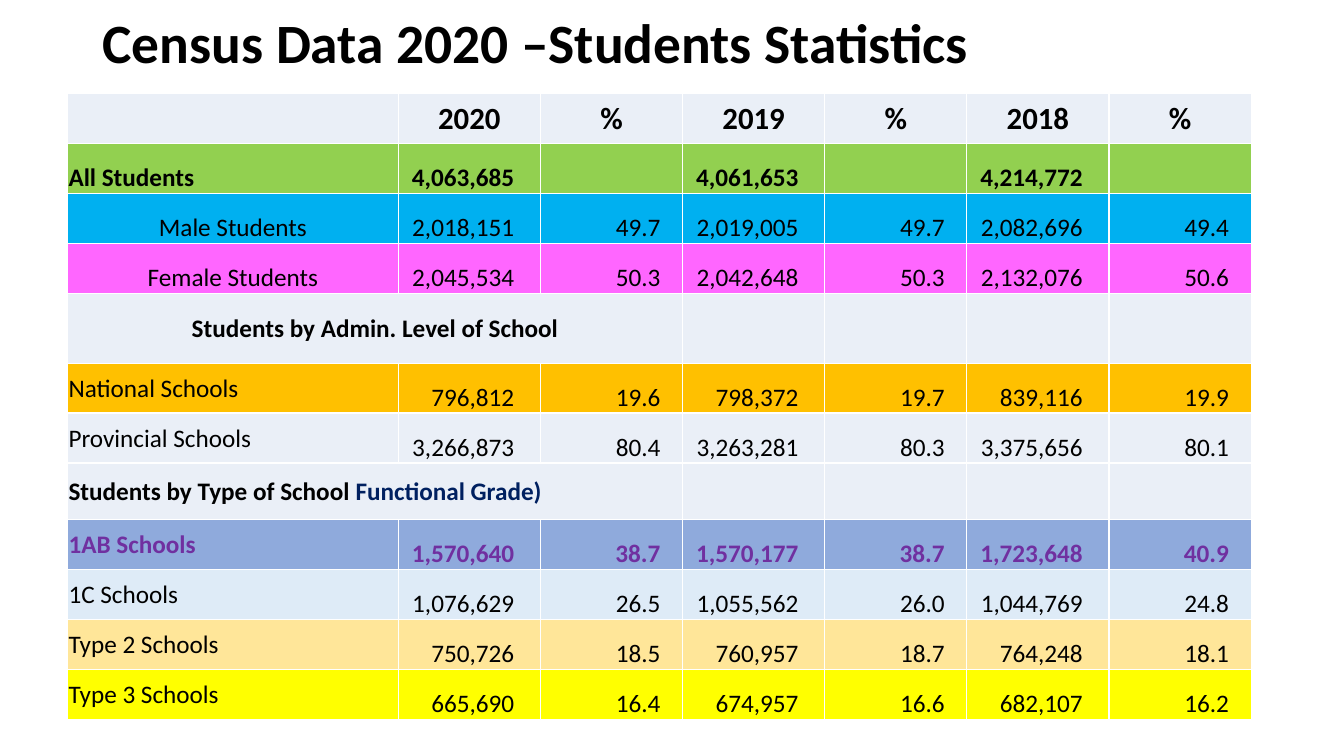
from dataclasses import dataclass

import lxml.etree
import pptx
import pptx.dml.color
import pptx.enum.text
import pptx.oxml.ns
import pptx.table
import pptx.text.text
import pptx.util

Inches = pptx.util.Inches
Align = pptx.enum.text.PP_ALIGN
Anchor = pptx.enum.text.MSO_ANCHOR


@dataclass(frozen=True)
class Theme:
    font: str = "Calibri"
    title_size: float = 39.6
    header_size: float = 22
    body_size: float = 18
    text: str = "000000"
    functional_grade: str = "002060"
    highlight: str = "7030A0"
    border: str = "FFFFFF"
    pale: str = "EAEFF7"
    green: str = "92D050"
    blue: str = "00B0F0"
    pink: str = "FF66FF"
    orange: str = "FFC000"
    slate: str = "8FAADC"
    ice: str = "DEEBF7"
    sand: str = "FFE699"
    yellow: str = "FFFF00"


THEME = Theme()


@dataclass(frozen=True)
class StatisticsRow:
    label: str
    values: tuple[str, ...] = ("",) * 6
    fill: str = THEME.pale
    color: str = THEME.text
    bold: bool = False
    label_align: Align = Align.LEFT
    label_anchor: Anchor = Anchor.MIDDLE
    is_header: bool = False
    is_section: bool = False
    height: float = 0
    label_suffix: str = ""


TITLE = "Census Data 2020 –Students Statistics"
TABLE_LEFT, TABLE_TOP, TABLE_HEIGHT = 0.67, 0.93, 6.21
COLUMN_WIDTHS = (3.28,) + (1.41,) * 6
COUNT_MARGIN, PERCENT_MARGIN, CELL_MARGIN = 0.26, 0.22, 0.01

ROWS = (
    StatisticsRow("", ("2020", "%", "2019", "%", "2018", "%"), bold=True, is_header=True),
    StatisticsRow("All Students", ("4,063,685", "", "4,061,653", "", "4,214,772", ""),
                  THEME.green, bold=True, label_anchor=Anchor.BOTTOM),
    StatisticsRow("Male Students", ("2,018,151", "49.7", "2,019,005", "49.7", "2,082,696", "49.4"),
                  THEME.blue, label_align=Align.CENTER, label_anchor=Anchor.BOTTOM),
    StatisticsRow("Female Students", ("2,045,534", "50.3", "2,042,648", "50.3", "2,132,076", "50.6"),
                  THEME.pink, label_align=Align.CENTER, label_anchor=Anchor.BOTTOM),
    StatisticsRow("Students by Admin. Level of School", bold=True, label_align=Align.CENTER,
                  is_section=True, height=0.69),
    StatisticsRow("National Schools", ("796,812", "19.6", "798,372", "19.7", "839,116", "19.9"),
                  THEME.orange),
    StatisticsRow("Provincial Schools", ("3,266,873", "80.4", "3,263,281", "80.3", "3,375,656", "80.1")),
    StatisticsRow("Students by Type of School ", bold=True, is_section=True, height=0.56,
                  label_suffix="Functional Grade)"),
    StatisticsRow("1AB Schools", ("1,570,640", "38.7", "1,570,177", "38.7", "1,723,648", "40.9"),
                  THEME.slate, THEME.highlight, bold=True),
    StatisticsRow("1C Schools", ("1,076,629", "26.5", "1,055,562", "26.0", "1,044,769", "24.8"),
                  THEME.ice),
    StatisticsRow("Type 2 Schools", ("750,726", "18.5", "760,957", "18.7", "764,248", "18.1"),
                  THEME.sand),
    StatisticsRow("Type 3 Schools", ("665,690", "16.4", "674,957", "16.6", "682,107", "16.2"),
                  THEME.yellow),
)


def rgb(color: str) -> pptx.dml.color.RGBColor:
    return pptx.dml.color.RGBColor.from_string(color)


def set_font(font: pptx.text.text.Font, size: float, color: str, bold: bool) -> None:
    font.name = THEME.font
    font.size = pptx.util.Pt(size)
    font.bold = bold
    font.color.rgb = rgb(color)


def add_borders(cell: pptx.table._Cell) -> None:
    qn = pptx.oxml.ns.qn
    properties = cell._tc.get_or_add_tcPr()
    for index, side in enumerate(("lnL", "lnR", "lnT", "lnB")):
        line = lxml.etree.Element(qn(f"a:{side}"), w=str(pptx.util.Pt(1)))
        fill = lxml.etree.SubElement(line, qn("a:solidFill"))
        lxml.etree.SubElement(fill, qn("a:srgbClr"), val=THEME.border)
        properties.insert(index, line)


def fill_cell(cell: pptx.table._Cell, row: StatisticsRow, column: int) -> None:
    cell.fill.solid()
    cell.fill.fore_color.rgb = rgb(row.fill)
    add_borders(cell)
    cell.margin_left = cell.margin_right = cell.margin_top = Inches(CELL_MARGIN)
    cell.margin_bottom = 0
    paragraph = cell.text_frame.paragraphs[0]
    size = THEME.header_size if row.is_header else THEME.body_size
    set_font(paragraph.font, size, row.color, row.bold)
    text = row.label if column == 0 else row.values[column - 1]
    if not text:
        return
    paragraph.add_run().text = text
    if column == 0:
        paragraph.alignment = row.label_align
        cell.vertical_anchor = row.label_anchor
        if row.label_suffix:
            suffix = paragraph.add_run()
            suffix.text = row.label_suffix
            suffix.font.color.rgb = rgb(THEME.functional_grade)
    elif row.is_header:
        paragraph.alignment = Align.CENTER
        cell.vertical_anchor = Anchor.MIDDLE
    else:
        paragraph.alignment = Align.RIGHT
        cell.vertical_anchor = Anchor.BOTTOM
        cell.margin_right = Inches(COUNT_MARGIN if column % 2 else PERCENT_MARGIN)


def add_title(slide: pptx.slide.Slide) -> None:
    frame = slide.shapes.add_textbox(Inches(0.92), Inches(0.07), Inches(11.5), Inches(0.76)).text_frame
    frame.word_wrap = True
    frame.vertical_anchor = Anchor.MIDDLE
    paragraph = frame.paragraphs[0]
    paragraph.text = TITLE
    paragraph.line_spacing = 0.9
    set_font(paragraph.font, THEME.title_size, THEME.text, True)


def add_statistics_table(slide: pptx.slide.Slide) -> None:
    table = slide.shapes.add_table(
        len(ROWS), len(COLUMN_WIDTHS), Inches(TABLE_LEFT), Inches(TABLE_TOP),
        Inches(sum(COLUMN_WIDTHS)), Inches(TABLE_HEIGHT)).table
    table.first_row = table.horz_banding = False
    for column, width in zip(table.columns, COLUMN_WIDTHS):
        column.width = Inches(width)
    regular_rows = sum(not row.height for row in ROWS)
    regular_height = (TABLE_HEIGHT - sum(row.height for row in ROWS)) / regular_rows
    for row_index, row in enumerate(ROWS):
        table.rows[row_index].height = Inches(row.height or regular_height)
        for column_index in range(len(COLUMN_WIDTHS)):
            fill_cell(table.cell(row_index, column_index), row, column_index)
        if row.is_section:
            table.cell(row_index, 0).merge(table.cell(row_index, 2))


def main() -> None:
    presentation = pptx.Presentation()
    presentation.slide_width = Inches(13.33)
    presentation.slide_height = Inches(7.5)
    slide = presentation.slides.add_slide(presentation.slide_layouts[6])
    add_title(slide)
    add_statistics_table(slide)
    presentation.save("out.pptx")


if __name__ == "__main__":
    main()
